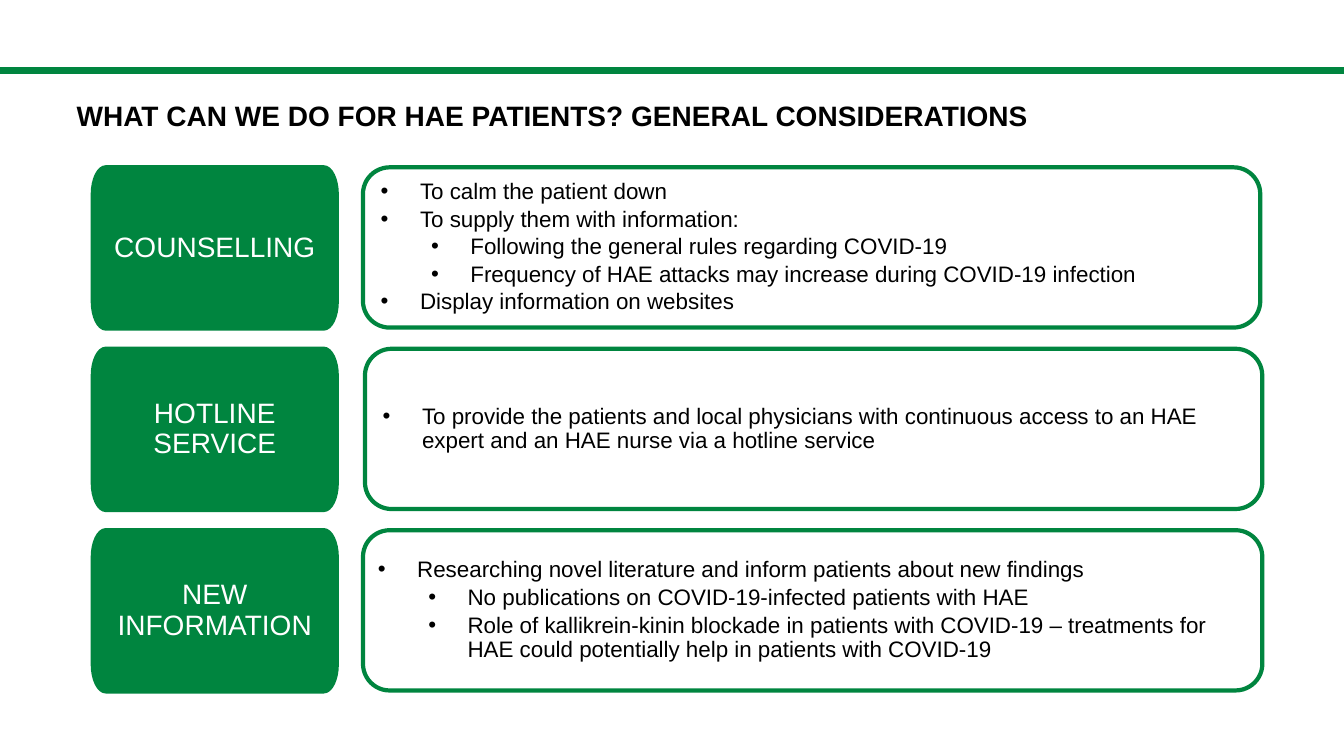
from lxml.etree import SubElement
from pptx import Presentation
from pptx.dml.color import RGBColor
from pptx.enum.shapes import MSO_CONNECTOR, MSO_SHAPE
from pptx.enum.text import MSO_ANCHOR, PP_ALIGN
from pptx.oxml.ns import qn
from pptx.util import Inches, Pt

GREEN = RGBColor(0x00, 0x85, 0x3F)
BLACK = RGBColor(0x00, 0x00, 0x00)
WHITE = RGBColor(0xFF, 0xFF, 0xFF)

LABEL_LEFT, LABEL_WIDTH, LABEL_HEIGHT, BOX_HEIGHT = 0.92, 2.42, 1.6, 1.59
CORNER_WIDTH, CORNER_HEIGHT, CORNER_PULL = 0.13, 0.27, 0.55
FIRST_ROW_TOP, ROW_PITCH = 1.66, 1.8

# Label, box left, box width, side inset, top inset, (level, text) bullets
ROWS = [
    ("COUNSELLING", 3.6, 8.9, 0.1, 0.05, [
        (0, "To calm the patient down"),
        (0, "To supply them with information:"),
        (1, "Following the general rules regarding COVID-19"),
        (1, "Frequency of HAE attacks may increase during COVID-19 infection"),
        (0, "Display information on websites"),
    ]),
    ("HOTLINE SERVICE", 3.62, 8.9, 0.1, 0.05, [
        (0, "To provide the patients and local physicians with continuous access "
            "to an HAE expert and an HAE nurse via a hotline service"),
    ]),
    ("NEW INFORMATION", 3.6, 8.92, 0.07, 0.03, [
        (0, "Researching novel literature and inform patients about new findings"),
        (1, "No publications on COVID-19-infected patients with HAE"),
        (1, "Role of kallikrein-kinin blockade in patients with COVID-19 – treatments "
            "for HAE could potentially help in patients with COVID-19"),
    ]),
]


def set_frame(frame, side, top, bottom, anchor):
    frame.word_wrap = True
    frame.margin_left = frame.margin_right = Inches(side)
    frame.margin_top, frame.margin_bottom = Inches(top), Inches(bottom)
    frame.vertical_anchor = anchor


def set_font(paragraph, size, color, bold=False):
    font = paragraph.font
    font.name, font.size, font.bold = "Arial", Pt(size), bold
    font.color.rgb = color


deck = Presentation()
deck.slide_width, deck.slide_height = Inches(13.33), Inches(7.5)
page = deck.slides.add_slide(deck.slide_layouts[6])

rule = page.shapes.add_connector(
    MSO_CONNECTOR.STRAIGHT, 0, Inches(0.7), deck.slide_width, Inches(0.7))
rule.line.color.rgb = GREEN
rule.line.width = Pt(5)
SubElement(rule._element.spPr, qn("a:effectLst"))

title = page.shapes.add_textbox(Inches(0.76), Inches(0.86), Inches(11.89), Inches(0.99))
set_frame(title.text_frame, 0, 0.12, 0, MSO_ANCHOR.TOP)
heading = title.text_frame.paragraphs[0]
heading.text = "WHAT CAN WE DO FOR HAE PATIENTS? GENERAL CONSIDERATIONS"
set_font(heading, 20, BLACK, bold=True)

for row, (name, left, width, side, top_inset, bullets) in enumerate(ROWS):
    top = FIRST_ROW_TOP + row * ROW_PITCH

    # Label outline, clockwise from the left edge; every other side is a corner
    right, bottom = LABEL_LEFT + LABEL_WIDTH, top + LABEL_HEIGHT
    near_x, far_x = LABEL_LEFT + CORNER_WIDTH, right - CORNER_WIDTH
    near_y, far_y = top + CORNER_HEIGHT, bottom - CORNER_HEIGHT
    outline = [(Inches(x), Inches(y)) for x, y in [
        (LABEL_LEFT, near_y), (near_x, top), (far_x, top), (right, near_y),
        (right, far_y), (far_x, bottom), (near_x, bottom), (LABEL_LEFT, far_y)]]
    builder = page.shapes.build_freeform(*outline[0])
    builder.add_line_segments(outline[1:] + outline[:1], close=True)
    label = builder.convert_to_shape()

    # Turn the corner sides into curves that pull towards the sharp corner
    for corner, side_line in enumerate(list(label._element.iter(qn("a:lnTo")))[::2]):
        start_x, start_y = outline[2 * corner]
        end_x, end_y = outline[2 * corner + 1]
        sharp_x, sharp_y = (start_x, end_y) if corner % 2 == 0 else (end_x, start_y)
        side_line.tag = qn("a:cubicBezTo")
        for position, (x, y) in enumerate([(start_x, start_y), (end_x, end_y)]):
            control = SubElement(side_line, qn("a:pt"))
            control.set("x", str(round(x + CORNER_PULL * (sharp_x - x) - label.left)))
            control.set("y", str(round(y + CORNER_PULL * (sharp_y - y) - label.top)))
            side_line.insert(position, control)

    label.fill.solid()
    label.fill.fore_color.rgb = GREEN
    set_frame(label.text_frame, 0.15, 0.11, 0.11, MSO_ANCHOR.MIDDLE)
    caption = label.text_frame.paragraphs[0]
    caption.text = name
    caption.alignment = PP_ALIGN.CENTER
    caption.line_spacing = 0.9
    set_font(caption, 20, WHITE)

    box = page.shapes.add_shape(
        MSO_SHAPE.ROUNDED_RECTANGLE, Inches(left), Inches(top), Inches(width), Inches(BOX_HEIGHT))
    box.fill.background()
    set_frame(box.text_frame, side, top_inset, top_inset, MSO_ANCHOR.MIDDLE)
    for index, (level, text) in enumerate(bullets):
        para = box.text_frame.paragraphs[0] if index == 0 else box.text_frame.add_paragraph()
        para.text = text
        para.alignment = PP_ALIGN.LEFT
        properties = para._p.get_or_add_pPr()
        properties.set("marL", str(Inches(0.39 + 0.5 * level)))
        properties.set("indent", str(Inches(-0.39)))
        SubElement(properties, qn("a:buFont"), typeface="Arial")
        SubElement(properties, qn("a:buChar"), char="•")
        para.line_spacing = 0.9
        para.space_after = Pt(2.4)
        set_font(para, 16, BLACK)

    for shape in (label, box):
        shape.shadow.inherit = False
        shape.line.color.rgb = GREEN
        shape.line.width = Pt(3)

deck.save("out.pptx")
